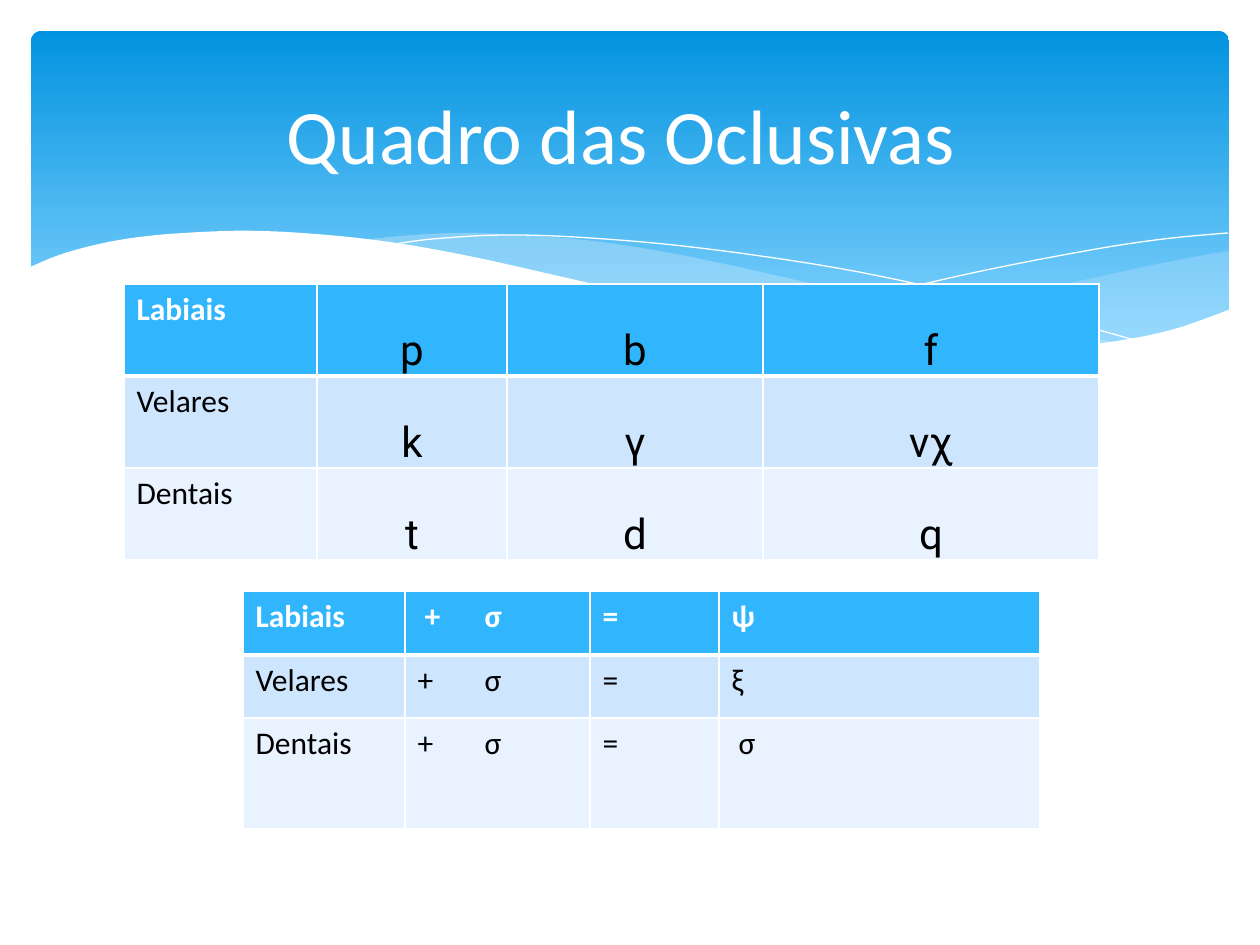
from itertools import chain

from lxml.etree import SubElement
from pptx import Presentation
from pptx.dml.color import RGBColor
from pptx.enum.shapes import MSO_SHAPE as SHAPE
from pptx.enum.text import MSO_ANCHOR as ANCHOR, PP_ALIGN as ALIGN
from pptx.oxml import parse_xml
from pptx.oxml.ns import nsdecls, qn
from pptx.util import Pt

SCALE = 914400 / 126
WHITE, BLACK = "FFFFFF", "000000"
ROW_FILLS = ["31B6FD", "CEE5FE", "E8F3FF"]
STEPS = 6

RIGHT_WAVE = [
    [(1198, 220), (1147, 229), (1053, 249), (950, 273), (858, 292), (801, 302)],
    [(801, 302), (874, 311), (953, 318), (1007, 318), (1079, 312), (1147, 299), (1198, 280)],
]
MIDDLE_WAVE = [
    [(1094, 312), (985, 296), (858, 271), (761, 248), (650, 224), (554, 209),
     (447, 202), (382, 204), (329, 209)],
    [(329, 209), (425, 224), (534, 248), (682, 281), (788, 301), (878, 314),
     (971, 319), (1037, 318), (1094, 312)],
]
FALLING_LINE = [[(358, 214), (402, 208), (474, 204), (559, 207), (669, 217),
                 (806, 237), (926, 262), (1016, 285), (1111, 311)]]
RISING_LINE = [[(741, 292), (844, 265), (946, 241), (1060, 219), (1133, 208), (1197, 202)]]
WHITE_WAVE = [
    [(1200, 278), (1140, 299), (1071, 312), (988, 318), (883, 311), (757, 294),
     (635, 270), (532, 246), (428, 223), (336, 208), (234, 200), (152, 202),
     (88, 209), (34, 222), (-3, 237)],
    [(-3, 383), (1200, 383)],
]


def px(n):
    return round(n * SCALE)


def rgb(value):
    return RGBColor.from_string(value)


def smooth(points):
    padded = [points[0], *points, points[-1]]
    curve = [points[0]]
    for a, b, c, d in zip(padded, padded[1:], padded[2:], padded[3:]):
        for step in range(1, STEPS + 1):
            t = step / STEPS
            curve.append(tuple(
                (2 * q + (r - p) * t + (2 * p - 5 * q + 4 * r - u) * t ** 2
                 + (3 * q - p - 3 * r + u) * t ** 3) / 2
                for p, q, r, u in zip(a, b, c, d)))
    return curve


def add_wave(s, left, top, edges, fill=None, alpha=100):
    points = [(px(left + x), px(top + y))
              for x, y in chain.from_iterable(smooth(e) for e in edges)]
    builder = s.shapes.build_freeform(*points[0], scale=1.0)
    builder.add_line_segments(points[1:], close=fill is not None)
    sp = builder.convert_to_shape()
    sp.shadow.inherit = False
    if fill is None:
        sp.fill.background()
        sp.line.color.rgb = rgb(WHITE)
        sp.line.width = Pt(0)
        return
    sp.line.fill.background()
    sp.fill.solid()
    sp.fill.fore_color.rgb = rgb(fill)
    if alpha < 100:
        color = next(sp.element.spPr.iter(qn("a:srgbClr")))
        SubElement(color, qn("a:alpha"), val=str(alpha * 1000))


def add_banner(s, left, top, width, height):
    sp = s.shapes.add_shape(SHAPE.ROUNDED_RECTANGLE, px(left), px(top), px(width), px(height))
    sp.shadow.inherit = False
    sp.adjustments[0] = 0.03
    sp.line.fill.background()
    sp.fill.gradient()
    sp.fill.gradient_angle = 270
    for stop, position, color in zip(sp.fill.gradient_stops, (0, 0.9), ("0293E0", "83D3FE")):
        stop.position = position
        stop.color.rgb = rgb(color)
    add_wave(s, left, top, RIGHT_WAVE, "C6E7FC", 29)
    add_wave(s, left, top, MIDDLE_WAVE, "C6E7FC", 40)
    add_wave(s, left, top, FALLING_LINE)
    add_wave(s, left, top, RISING_LINE)
    add_wave(s, left, top, WHITE_WAVE, WHITE)


def add_text(p, text, size, font, color, bold=False):
    r = p.add_run()
    r.text = text
    r.font.size = Pt(size)
    r.font.name = font
    r.font.bold = bold
    r.font.color.rgb = rgb(color)


def add_title(s, left, top, width, height):
    title = s.shapes.title
    title.left, title.top, title.width, title.height = map(px, (left, top, width, height))
    title.element.getparent().append(title.element)
    tf = title.text_frame
    tf.word_wrap = True
    tf.vertical_anchor = ANCHOR.MIDDLE
    p = tf.paragraphs[0]
    p.alignment = ALIGN.CENTER
    add_text(p, "Quadro das Oclusivas ", 44, "Calibri", WHITE)


def set_borders(cell, row):
    widths = {"L": 1, "R": 1, "T": 3 if row == 1 else 1, "B": 3 if row == 0 else 1}
    tcPr = cell._tc.get_or_add_tcPr()
    for i, (side, width) in enumerate(widths.items()):
        tcPr.insert(i, parse_xml(
            f'<a:ln{side} {nsdecls("a")} w="{Pt(width)}"><a:solidFill>'
            f'<a:srgbClr val="{WHITE}"/></a:solidFill></a:ln{side}>'))


def style_letter(cell):
    cell.vertical_anchor = ANCHOR.BOTTOM
    cell.margin_left = cell.margin_right = cell.margin_top = px(1)
    cell.margin_bottom = 0
    cell.text_frame.paragraphs[0].alignment = ALIGN.CENTER


def add_tab_stop(p, position):
    tabs = SubElement(p._p.get_or_add_pPr(), qn("a:tabLst"))
    SubElement(tabs, qn("a:tab"), pos=str(px(position)), algn="l")


def add_grid(s, left, top, cols, rows, texts, letters=False):
    frame = s.shapes.add_table(len(rows), len(cols), px(left), px(top),
                               px(sum(cols)), px(sum(rows)))
    table = frame.table
    for column, width in zip(table.columns, cols):
        column.width = px(width)
    for i, (row, height, fill, line) in enumerate(zip(table.rows, rows, ROW_FILLS, texts)):
        row.height = px(height)
        for j, (cell, text) in enumerate(zip(row.cells, line)):
            cell.fill.solid()
            cell.fill.fore_color.rgb = rgb(fill)
            set_borders(cell, i)
            p = cell.text_frame.paragraphs[0]
            if "\t" in text:
                add_tab_stop(p, 67)
            if letters and j:
                style_letter(cell)
                add_text(p, text, 24, "Roboto", BLACK)
            else:
                add_text(p, text, 18, "Calibri", BLACK if i else WHITE, i == 0)


def main():
    prs = Presentation()
    prs.slide_width, prs.slide_height = px(1260), px(945)
    s = prs.slides.add_slide(prs.slide_layouts[5])
    s.background.fill.solid()
    s.background.fill.fore_color.rgb = rgb(WHITE)
    add_banner(s, 31, 31, 1198, 340)
    add_title(s, 63, 47, 1134, 173)
    add_grid(s, 124, 284, [193, 190, 256, 336], [92] * 3, [
        ["Labiais", "p", "b", "f"],
        ["Velares", "k", "γ", "vχ"],
        ["Dentais", "t", "d", "q"],
    ], letters=True)
    add_grid(s, 243, 591, [162, 185, 129, 321], [64, 63, 111], [
        ["Labiais", " +\tσ", "=", "ψ"],
        ["Velares", "+\tσ", "=", "ξ"],
        ["Dentais", "+\tσ", "=", " σ"],
    ])
    prs.save("out.pptx")


if __name__ == "__main__":
    main()
